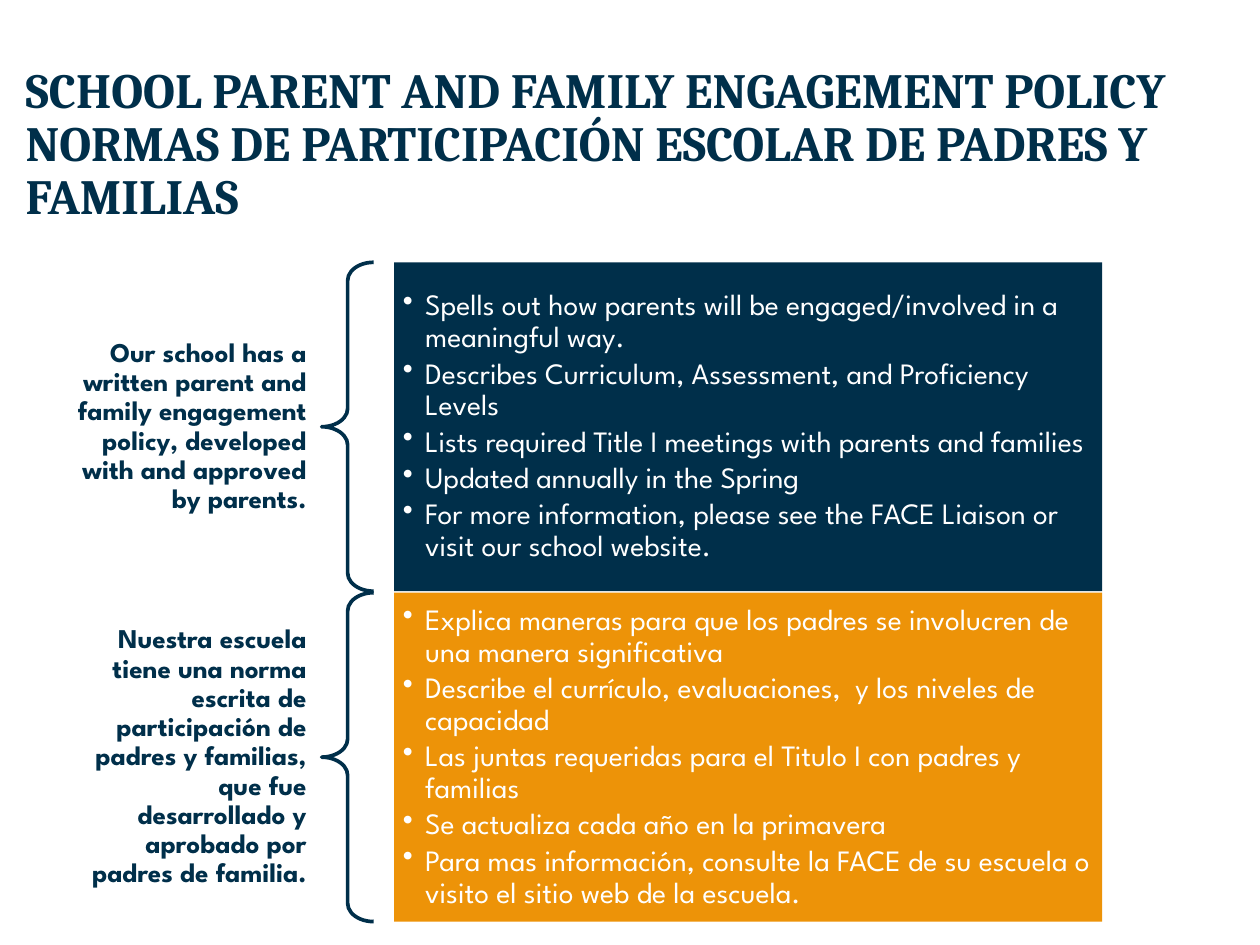
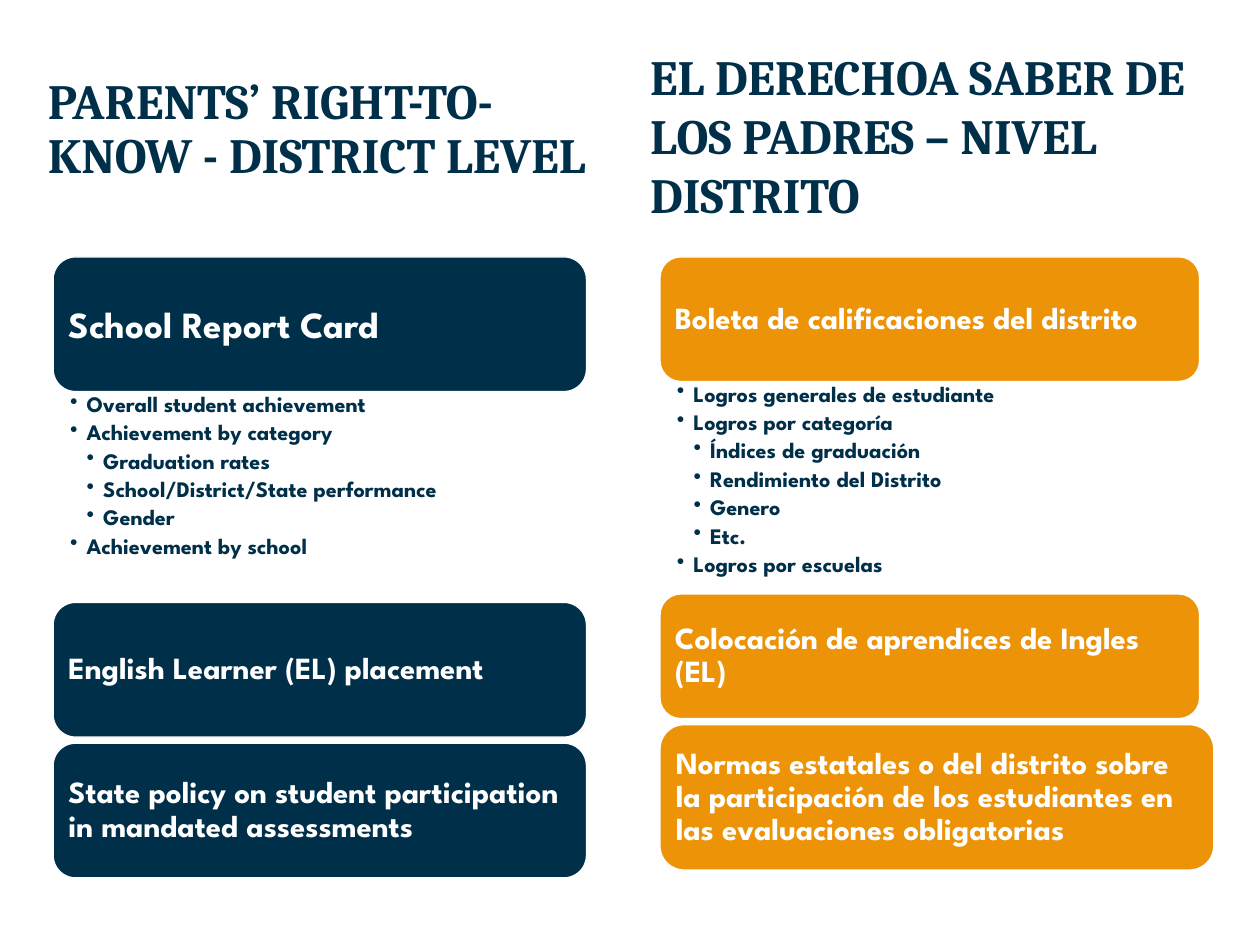
from dataclasses import dataclass
from lxml import etree
from pptx import Presentation
from pptx.dml.color import RGBColor
from pptx.enum import shapes, text
from pptx.oxml import ns
from pptx.util import Pt


@dataclass(frozen=True)
class Theme:
    navy: str = "002F4A"
    gold: str = "ED9308"
    white: str = "FFFFFF"
    serif: str = "Cambria"
    sans: str = "League Spartan"
    title: int = 40
    lead: int = 30
    head: int = 25
    body: int = 24
    side: int = 22
    list: int = 18


theme = Theme()
kind = shapes.MSO_SHAPE
anchor = text.MSO_ANCHOR
align = text.PP_ALIGN


def write(shape, items, size, color, bold=True, font=theme.sans, side=align.LEFT,
          pads=(7.2, 7.2, 7.2, 7.2), mid=anchor.MIDDLE, space=0.9, step=0):
    frame = shape.text_frame
    look = dict(zip(("margin_left", "margin_top", "margin_right", "margin_bottom"), map(Pt, pads)))
    look |= {"word_wrap": True, "auto_size": text.MSO_AUTO_SIZE.NONE, "vertical_anchor": mid}
    for name, value in look.items():
        setattr(frame, name, value)
    for i, (level, words) in enumerate(items):
        para = frame.paragraphs[0] if i == 0 else frame.add_paragraph()
        para.text = words
        form = {"alignment": side, "line_spacing": space, "level": level,
                "space_before": Pt(3.6 if i else 0)}
        for name, value in form.items():
            setattr(para, name, value)
        for run in para.runs:
            for name, value in {"name": font, "size": Pt(size), "bold": bold}.items():
                setattr(run.font, name, value)
            run.font.color.rgb = RGBColor.from_string(color)
        if step:
            props = para._p.get_or_add_pPr()
            props.set("marL", str(Pt(step * level)))
            props.set("indent", str(-Pt(step)))
            tint = etree.SubElement(props, ns.qn("a:buClr"))
            etree.SubElement(tint, ns.qn("a:srgbClr")).set("val", color)
            etree.SubElement(props, ns.qn("a:buChar")).set("char", "•")


def draw(slide, form, area, fill=None, line=None, width=1):
    shape = slide.shapes.add_shape(form, *map(Pt, area))
    shape.shadow.inherit = False
    if fill:
        shape.fill.solid()
        shape.fill.fore_color.rgb = RGBColor.from_string(fill)
    else:
        shape.fill.background()
    if line:
        shape.line.color.rgb = RGBColor.from_string(line)
        shape.line.width = Pt(width)
    else:
        shape.line.fill.background()
    return shape


deck = Presentation()
deck.slide_width, deck.slide_height = Pt(1024), Pt(768)
heads = [
    ("SCHOOL PARENT AND FAMILY ENGAGEMENT POLICY \vNORMAS DE PARTICIPACIÓN ESCOLAR DE PADRES Y FAMILIAS",
     (13.7, 23.8, 1010, 188.6)),
    ("PARENTS’ RIGHT-TO-KNOW - DISTRICT LEVEL", (31.7, 33.8, 480, 144.7)),
]
head = {"size": theme.title, "color": theme.navy, "font": theme.serif, "pads": (7.2, 3.6, 7.2, 3.6)}
slides = []
for words, area in heads:
    slide = deck.slides.add_slide(deck.slide_layouts[5])
    title = slide.shapes.title
    title.left, title.top, title.width, title.height = map(Pt, area)
    write(title, [(0, words)], **head)
    slides.append(slide)
policy, rights = slides

bands = [
    (theme.navy, "Our school has a written parent and family engagement policy, developed with and approved by parents.", [
        "Spells out how parents will be engaged/involved in a meaningful way.",
        "Describes Curriculum, Assessment, and Proficiency Levels",
        "Lists required Title I meetings with parents and families",
        "Updated annually in the Spring",
        "For more information, please see the FACE Liaison or visit our school website."]),
    (theme.gold, "Nuestra escuela tiene una norma escrita de participación de padres y familias, que fue desarrollado y aprobado por padres de familia.", [
        "Explica maneras para que los padres se involucren de una manera significativa",
        "Describe el currículo, evaluaciones,  y los niveles de capacidad",
        "Las juntas requeridas para el Titulo I con padres y familias",
        "Se actualiza cada año en la primavera",
        "Para mas información, consulte la FACE de su escuela o visito el sitio web de la escuela."]),
]
tall, gap = 267.3, 1.2
for i, (fill, words, points) in enumerate(bands):
    top = 213.2 + i * (tall + gap)
    note = policy.shapes.add_textbox(*map(Pt, (49.7, top, 211.7, tall)))
    write(note, [(0, words)], theme.side, theme.navy, side=align.RIGHT, pads=(12.2, 4.3, 12.2, 4.3))
    brace = draw(policy, kind.LEFT_BRACE, (261.4, top, 42.3, tall), line=theme.navy, width=3)
    brace.adjustments[0] = 0.35
    panel = draw(policy, kind.RECTANGLE, (320.4, top, 575.3, tall), fill)
    write(panel, [(1, point) for point in points], theme.body, theme.white, bold=False, step=18)

columns = [
    (theme.navy, 43.2, 109.4, 171.4, [
        ("School Report Card", theme.lead, 1.0, 433.4, 109.4),
        ("English Learner (EL) placement", theme.head, 0.9, 433.4, 109.4),
        ("State policy on student participation in mandated assessments", theme.head, 0.9, 433.4, 109.4)], [
        (1, "Overall student achievement"),
        (1, "Achievement by category"),
        (2, "Graduation rates"),
        (2, "School/District/State performance"),
        (2, "Gender"),
        (1, "Achievement by school")]),
    (theme.gold, 536.4, 101.2, 172.8, [
        ("Boleta de calificaciones del distrito", theme.head, 0.9, 438.5, 101.2),
        ("Colocación de aprendices de Ingles (EL)", theme.head, 0.9, 438.5, 101.2),
        ("Normas estatales o del distrito sobre la participación de los estudiantes en las evaluaciones obligatorias",
         theme.head, 0.9, 450, 118)], [
        (1, "Logros generales de estudiante"),
        (1, "Logros por categoría"),
        (2, "Índices de graduación"),
        (2, "Rendimiento del Distrito"),
        (2, "Genero"),
        (2, "Etc."),
        (1, "Logros por escuelas")]),
]
for fill, left, high, drop, cards, points in columns:
    top = 208.8
    for i, (words, size, space, wide, deep) in enumerate(cards):
        card = draw(rights, kind.ROUNDED_RECTANGLE, (left, top, wide, deep), fill, theme.white)
        write(card, [(0, words)], size, theme.white, space=space)
        top += deep + (5, drop)[i == 0]
    items = rights.shapes.add_textbox(*map(Pt, (left, 208.8 + high, cards[0][3], drop)))
    write(items, points, theme.list, theme.navy, pads=(13.7, 1.4, 10.1, 1.4), mid=anchor.TOP, step=13.5)

twin = rights.shapes.add_textbox(*map(Pt, (521.3, 33.8, 480, 152.6)))
write(twin, [(0, "EL DERECHOA SABER DE LOS PADRES – NIVEL DISTRITO")], **head, mid=anchor.TOP, space=1.0)

deck.save("out.pptx")
